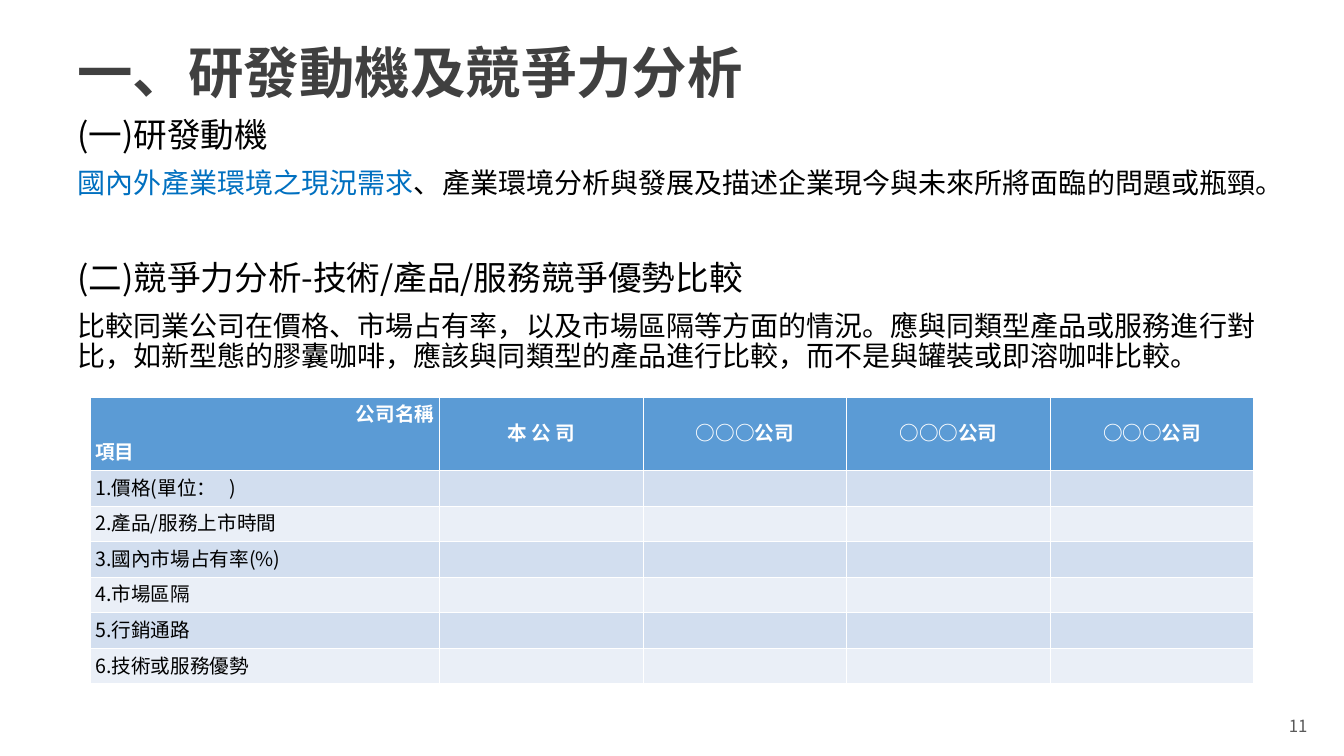
"""Builds the slide on R&D motivation and competitiveness analysis."""
from dataclasses import dataclass

from lxml import etree
from pptx import Presentation
from pptx.dml.color import RGBColor
from pptx.enum.text import MSO_ANCHOR, PP_ALIGN
from pptx.oxml.ns import qn
from pptx.util import Cm, Pt

LEFT, CENTER, RIGHT = PP_ALIGN.LEFT, PP_ALIGN.CENTER, PP_ALIGN.RIGHT
MIDDLE, TOP = MSO_ANCHOR.MIDDLE, MSO_ANCHOR.TOP


@dataclass(frozen=True)
class Theme:
    font: str = "Noto Sans CJK SC"
    title: str = "404040"
    text: str = "000000"
    highlight: str = "0070C0"
    muted: str = "595959"
    white: str = "FFFFFF"
    header: str = "5B9BD5"
    bands: tuple = ("D2DEEF", "EAEFF7")
    title_size: float = 39.6
    heading_size: int = 24
    body_size: int = 20
    table_size: int = 14
    number_size: int = 12


THEME = Theme()


def format_paragraph(paragraph, size, color, align=LEFT, bold=False, spacing=0.9, before=0):
    paragraph.alignment = align
    paragraph.line_spacing = spacing
    paragraph.space_before = Pt(before)
    font = paragraph.font
    font.size, font.bold = Pt(size), bold
    font.color.rgb = RGBColor.from_string(color)
    font.name = THEME.font
    defaults = paragraph._p.pPr.find(qn("a:defRPr"))
    etree.SubElement(defaults, qn("a:ea"), typeface=THEME.font)


def add_white_borders(cell):
    properties = cell._tc.get_or_add_tcPr()
    for side in ("lnL", "lnR", "lnT", "lnB"):
        line = etree.SubElement(properties, qn(f"a:{side}"), w=str(Pt(1)))
        fill = etree.SubElement(line, qn("a:solidFill"))
        etree.SubElement(fill, qn("a:srgbClr"), val=THEME.white)


prs = Presentation()
prs.slide_width, prs.slide_height = Cm(33.87), Cm(19.05)
slide = prs.slides.add_slide(prs.slide_layouts[5])

title = slide.shapes.title
title.left, title.top, title.width, title.height = Cm(1.7), Cm(0.97), Cm(30.48), Cm(1.85)
title.text_frame.text = "一、研發動機及競爭力分析"
title.text_frame.vertical_anchor = MIDDLE
format_paragraph(title.text_frame.paragraphs[0], THEME.title_size, THEME.title, bold=True)

page_number = slide.shapes.add_textbox(Cm(25.58), Cm(17.98), Cm(7.62), Cm(0.61)).text_frame
page_number.word_wrap = True
page_number.vertical_anchor = MIDDLE
page_number.text = "11"
format_paragraph(page_number.paragraphs[0], THEME.number_size, THEME.muted, RIGHT, spacing=1.0)

SECTIONS = [
    (THEME.heading_size, 10, [("(一)研發動機", THEME.text)]),
    (THEME.body_size, 10, [
        ("國內外產業環境之現況需求", THEME.highlight),
        ("、產業環境分析與發展及描述企業現今與未來所將面臨的問題或瓶頸。", THEME.text),
    ]),
    (THEME.heading_size, 44.5, [("(二)競爭力分析-技術/產品/服務競爭優勢比較", THEME.text)]),
    (THEME.body_size, 10, [
        ("比較同業公司在價格、市場占有率，以及市場區隔等方面的情況。應與同類型產品或服務進行對比，"
         "如新型態的膠囊咖啡，應該與同類型的產品進行比較，而不是與罐裝或即溶咖啡比較。", THEME.text),
    ]),
]
body = slide.shapes.add_textbox(Cm(1.7), Cm(2.87), Cm(30.48), Cm(13.51)).text_frame
body.word_wrap = True
body.vertical_anchor = TOP
for index, (size, before, pieces) in enumerate(SECTIONS):
    paragraph = body.add_paragraph() if index else body.paragraphs[0]
    format_paragraph(paragraph, size, THEME.text, before=before)
    for wording, color in pieces:
        run = paragraph.add_run()
        run.text = wording
        if color != THEME.text:
            run.font.color.rgb = RGBColor.from_string(color)

COMPANIES = ["本 公 司"] + ["○○○公司"] * 3
CRITERIA = ["價格(單位：   )", "產品/服務上市時間", "國內市場占有率(%)",
            "市場區隔", "行銷通路", "技術或服務優勢"]
rows = [["公司名稱\n項目"] + COMPANIES]
rows += [[f"{number}.{criterion}"] + [""] * len(COMPANIES)
         for number, criterion in enumerate(CRITERIA, 1)]

comparison = slide.shapes.add_table(
    len(rows), len(rows[0]), Cm(2.27), Cm(10.01), Cm(29.33), Cm(7.18)).table
for index, column in enumerate(comparison.columns):
    column.width = Cm(5.13) if index else Cm(8.81)
for index, row in enumerate(comparison.rows):
    row.height = Cm(0.89) if index else Cm(1.84)

for row_index, wordings in enumerate(rows):
    is_header = row_index == 0
    band = THEME.header if is_header else THEME.bands[(row_index - 1) % 2]
    color = THEME.white if is_header else THEME.text
    for column_index, wording in enumerate(wordings):
        cell = comparison.cell(row_index, column_index)
        add_white_borders(cell)
        cell.fill.solid()
        cell.fill.fore_color.rgb = RGBColor.from_string(band)
        cell.margin_left = cell.margin_right = Cm(0.13)
        cell.margin_top = cell.margin_bottom = Cm(0.13)
        cell.vertical_anchor = MIDDLE
        cell.text_frame.text = wording
        for paragraph in cell.text_frame.paragraphs:
            align = CENTER if is_header and column_index else LEFT
            format_paragraph(paragraph, THEME.table_size, color, align, is_header, Pt(18), 9)
comparison.cell(0, 0).text_frame.paragraphs[0].alignment = RIGHT

prs.save("out.pptx")
